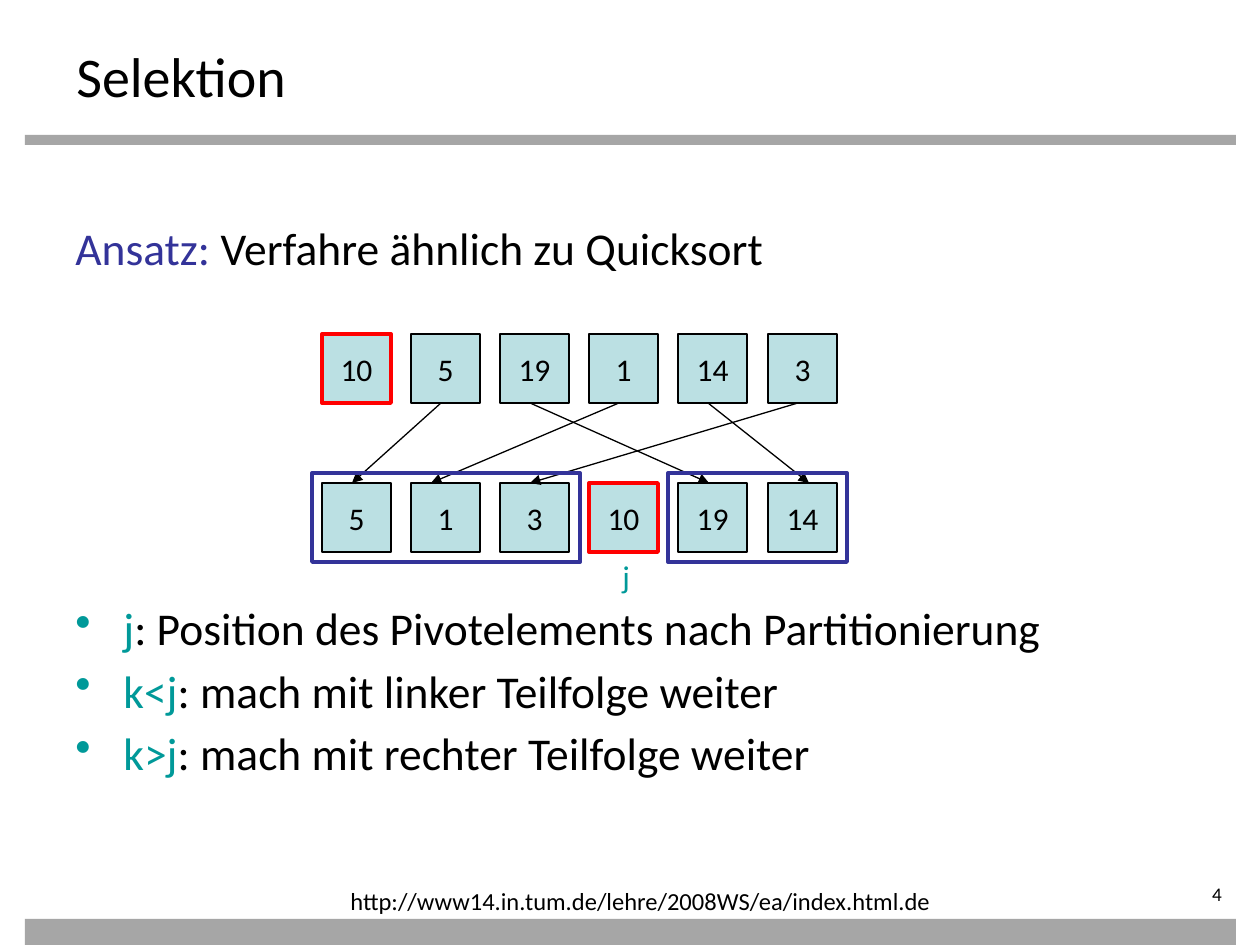
from lxml import etree
from pptx import Presentation
from pptx import util as u
from pptx.dml.color import RGBColor
from pptx.enum import shapes, text
from pptx.oxml.ns import qn

BLACK = RGBColor(0, 0, 0)
GREY = RGBColor(0xA6, 0xA6, 0xA6)
PALE = RGBColor(0xBB, 0xE0, 0xE3)
RED = RGBColor(0xFF, 0, 0)
BLUE = RGBColor(0x33, 0x33, 0x99)
TEAL = RGBColor(0, 0x99, 0x99)

CELL = 69
TOP_ROW, BOTTOM_ROW = 334, 483


def px(n):
    return u.Emu(round(n * 914400 / 126))


def cell_left(column):
    return 322 + column * 446 // 5


class Sheet:
    font = "Calibri"

    def __init__(self, slide):
        self.slide = slide

    def add_runs(self, paragraph, runs, size, **layout):
        for key, value in layout.items():
            setattr(paragraph, key, value)
        for words, color in runs:
            run = paragraph.add_run()
            run.text = words
            for key, value in dict(name=self.font, size=u.Pt(size)).items():
                setattr(run.font, key, value)
            run.font.color.rgb = color

    def label(self, left, top, width, height, runs, size, layout=None, **frame):
        box = self.slide.shapes.add_textbox(*map(px, (left, top, width, height)))
        for key, value in {"word_wrap": True, **frame}.items():
            setattr(box.text_frame, key, value)
        self.add_runs(box.text_frame.paragraphs[0], runs, size, **(layout or {}))
        return box.text_frame

    def bullet(self, frame, runs, size, indent, before):
        paragraph = frame.add_paragraph()
        self.hang(paragraph, indent)
        etree.SubElement(paragraph._p.get_or_add_pPr(), qn("a:buChar"), char="•")
        self.add_runs(paragraph, runs, size, space_before=u.Pt(before))

    def hang(self, paragraph, indent):
        properties = paragraph._p.get_or_add_pPr()
        properties.set("marL", str(px(indent)))
        properties.set("indent", str(-px(indent)))

    def rect(self, left, top, width, height, fill=None, line=None, weight=0.75):
        box = self.slide.shapes.add_shape(
            shapes.MSO_SHAPE.RECTANGLE, *map(px, (left, top, width, height)))
        box.shadow.inherit = False
        if fill is None:
            box.fill.background()
        else:
            box.fill.solid()
            box.fill.fore_color.rgb = fill
        if line is None:
            box.line.fill.background()
        else:
            box.line.color.rgb = line
            box.line.width = u.Pt(weight)
        return box

    def cell(self, column, top, number, pivot):
        line, weight = (RED, 2.25) if pivot else (BLACK, 0.75)
        box = self.rect(cell_left(column), top, CELL, CELL, PALE, line, weight)
        frame = dict(word_wrap=False, vertical_anchor=text.MSO_ANCHOR.MIDDLE)
        for key, value in frame.items():
            setattr(box.text_frame, key, value)
        self.add_runs(box.text_frame.paragraphs[0], [(number, BLACK)], 18,
                      alignment=text.PP_ALIGN.CENTER)

    def arrow(self, x1, y1, x2, y2):
        line = self.slide.shapes.add_connector(
            shapes.MSO_CONNECTOR.STRAIGHT, *map(px, (x1, y1, x2, y2)))
        line.line.color.rgb = BLACK
        line.line.width = u.Pt(0.75)
        outline = line._element.spPr.find(qn("a:ln"))
        etree.SubElement(outline, qn("a:tailEnd"), type="triangle")
        etree.SubElement(line._element.spPr, qn("a:effectLst"))


def main():
    deck = Presentation()
    deck.slide_width, deck.slide_height = px(1260), px(945)
    sheet = Sheet(deck.slides.add_slide(deck.slide_layouts[6]))

    for top, height in ((135, 10), (919, 26)):
        sheet.rect(25, top, 1211, height, GREY)
    sheet.label(1096, 882, 139, 28, [("4", BLACK)], 11,
                dict(alignment=text.PP_ALIGN.RIGHT), margin_left=0, margin_top=0,
                margin_right=px(13), margin_bottom=0)
    sheet.label(64, 35, 1134, 69, [("Selektion", BLACK)], 32)

    body = sheet.label(63, 214, 1134, 659, [
        ("Ansatz: ", BLUE), ("Verfahre ähnlich zu Quicksort", BLACK)], 26)
    sheet.hang(body.paragraphs[0], 48)
    cases = (("j", ": Position des Pivotelements nach Partitionierung", 186),
             ("k<j", ": mach mit linker Teilfolge weiter", 4.6),
             ("k>j", ": mach mit rechter Teilfolge weiter", 4.6))
    for condition, action, before in cases:
        sheet.bullet(body, [(condition, TEAL), (action, BLACK)], 26, 48, before)

    rows = ((TOP_ROW, ("10", "5", "19", "1", "14", "3")),
            (BOTTOM_ROW, ("5", "1", "3", "10", "19", "14")))
    for top, numbers in rows:
        for column, number in enumerate(numbers):
            sheet.cell(column, top, number, number == "10")

    for source, target_x in ((1, 352), (3, 431), (5, 530), (2, 709), (4, 809)):
        sheet.arrow(cell_left(source) + 30, TOP_ROW + CELL, target_x, BOTTOM_ROW)

    for first, count in ((0, 3), (4, 2)):
        sheet.rect(cell_left(first) - 10, BOTTOM_ROW - 10, count * 89 + 1, 89,
                   line=BLUE, weight=2.25)

    sheet.label(610, 551, 35, 50, [("j", TEAL)], 18, word_wrap=False)
    sheet.label(338, 880, 630, 43, [
        ("http://www14.in.tum.de/lehre/2008WS/ea/index.html.de", BLACK)], 14)
    deck.save("out.pptx")


if __name__ == "__main__":
    main()
